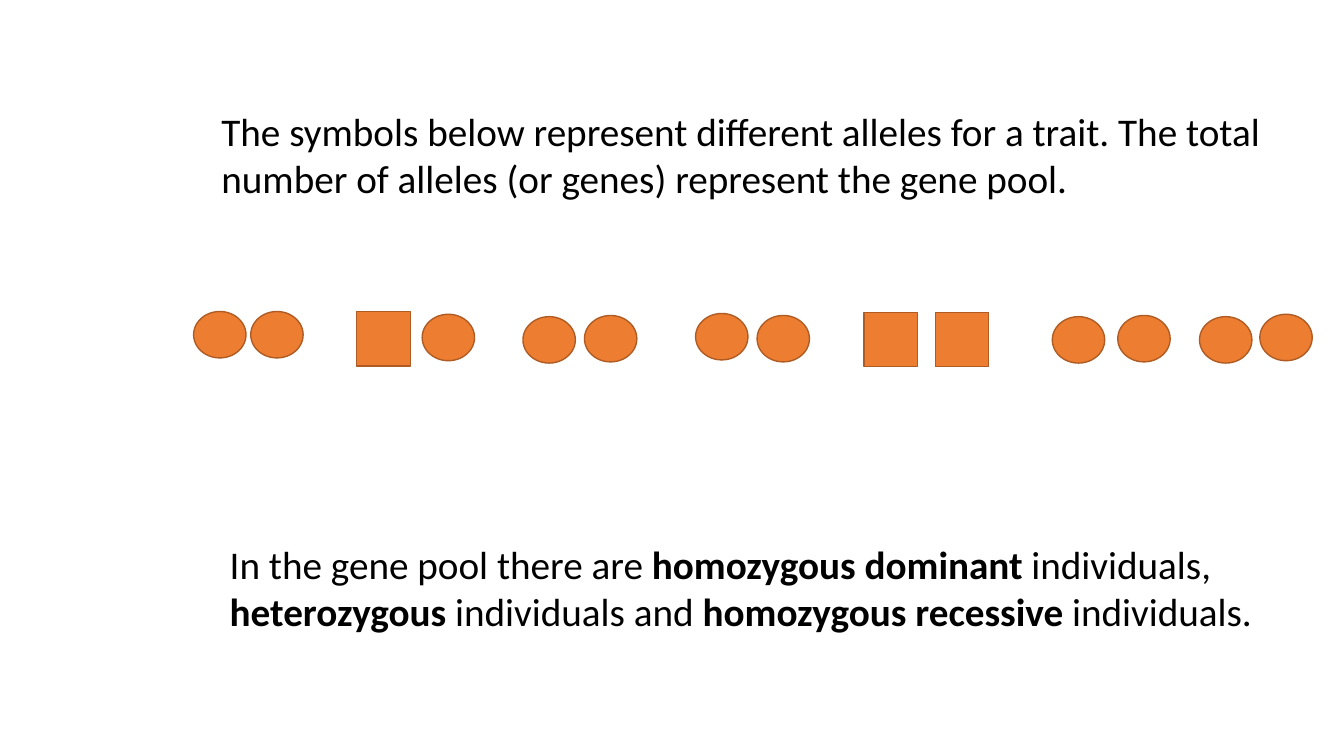
from pptx import Presentation
from pptx.dml.color import RGBColor
from pptx.enum.shapes import MSO_SHAPE
from pptx.enum.text import MSO_AUTO_SIZE
from pptx.util import Cm, Pt

ORANGE = RGBColor(0xED, 0x7D, 0x31)
BROWN = RGBColor(0xAF, 0x5C, 0x24)
BLACK = RGBColor(0x00, 0x00, 0x00)

deck = Presentation()
deck.slide_width = Cm(33.87)
deck.slide_height = Cm(19.05)
page = deck.slides.add_slide(deck.slide_layouts[6])

CIRCLE = (MSO_SHAPE.OVAL, 1.32, 1.17)
SQUARE = (MSO_SHAPE.RECTANGLE, 1.35, 1.37)
individuals = [
    [(CIRCLE, 4.88, 7.85), (CIRCLE, 6.32, 7.85)],
    [(SQUARE, 8.99, 7.85), (CIRCLE, 10.64, 7.92)],
    [(CIRCLE, 13.18, 7.98), (CIRCLE, 14.73, 7.95)],
    [(CIRCLE, 17.53, 7.9), (CIRCLE, 19.08, 7.95)],
    [(SQUARE, 21.77, 7.87), (SQUARE, 23.57, 7.87)],
    [(CIRCLE, 26.52, 7.98), (CIRCLE, 28.17, 7.95)],
    [(CIRCLE, 30.23, 7.98), (CIRCLE, 31.75, 7.92)],
]
for alleles in individuals:
    for (kind, width, height), left, top in alleles:
        allele = page.shapes.add_shape(kind, Cm(left), Cm(top), Cm(width), Cm(height))
        allele.shadow.inherit = False
        allele.fill.solid()
        allele.fill.fore_color.rgb = ORANGE
        allele.line.color.rgb = BROWN
        allele.line.width = Pt(1)

statements = [
    (5.33, 2.59, 27.56, [
        ("The symbols below represent different alleles for a trait. "
         "The total number of alleles (or genes) represent the gene pool.", False),
    ]),
    (5.54, 13.49, 27.18, [
        ("In the gene pool there are ", False),
        ("homozygous dominant ", True),
        ("individuals, ", False),
        ("heterozygous", True),
        (" individuals and ", False),
        ("homozygous recessive ", True),
        ("individuals.", False),
    ]),
]
for left, top, width, pieces in statements:
    box = page.shapes.add_textbox(Cm(left), Cm(top), Cm(width), Cm(2.64))
    box.text_frame.word_wrap = True
    box.text_frame.auto_size = MSO_AUTO_SIZE.SHAPE_TO_FIT_TEXT
    para = box.text_frame.paragraphs[0]
    for text, bold in pieces:
        span = para.add_run()
        span.text = text
        span.font.name = "Calibri"
        span.font.size = Pt(28)
        span.font.bold = bold
        span.font.color.rgb = BLACK

deck.save("out.pptx")
